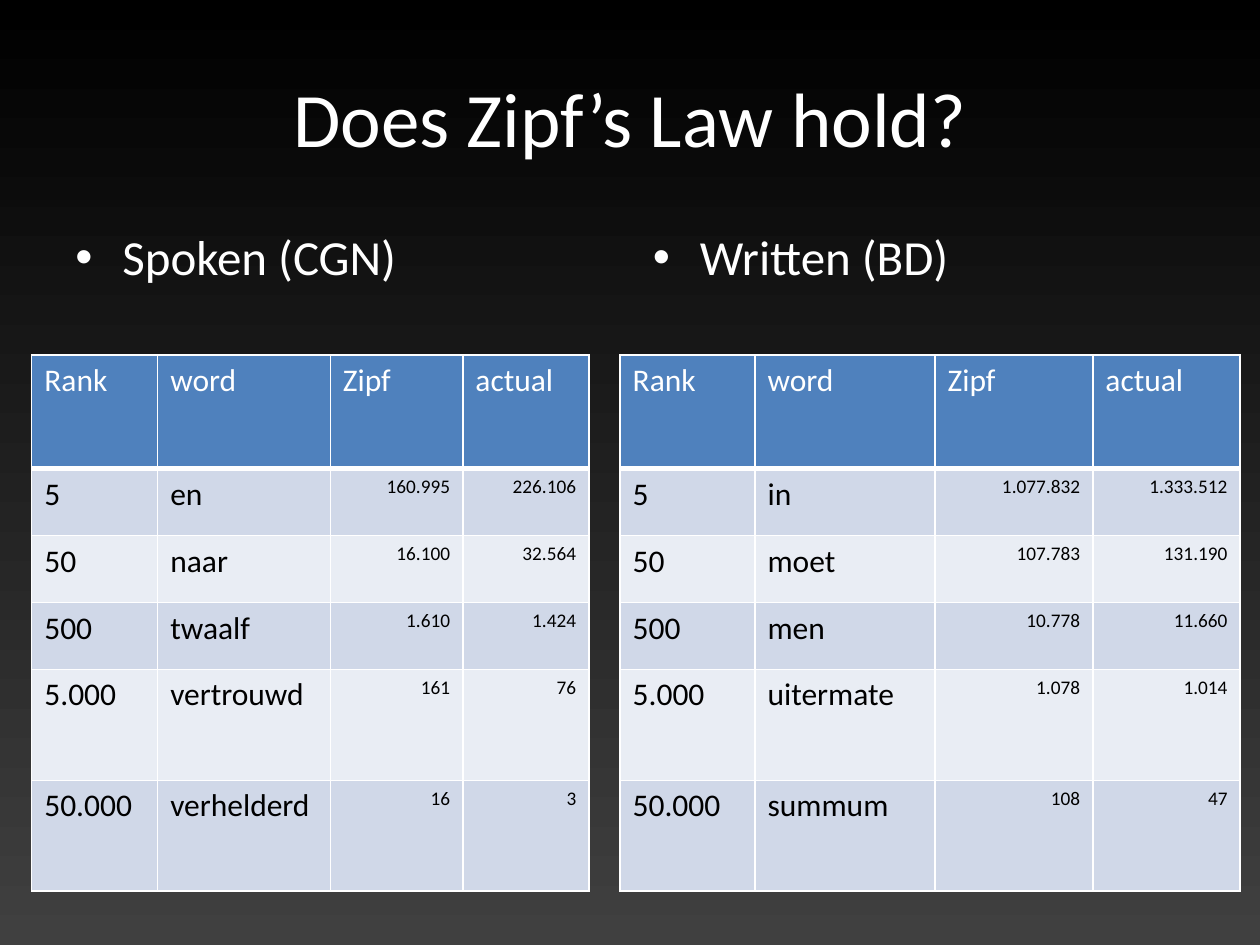
from lxml.etree import SubElement
from pptx import Presentation
from pptx.dml.color import RGBColor
from pptx.enum.text import MSO_ANCHOR, PP_ALIGN
from pptx.oxml.ns import qn
from pptx.util import Cm, Pt

# Content
TITLE = "Does Zipf’s Law hold?"
HEADER = ("Rank", "word", "Zipf", "actual")
CORPORA = [
    {
        "heading": "Spoken (CGN)", "heading_left": 1.27, "left": 0.64,
        "widths": (2.54, 3.48, 2.67, 2.54),
        "words": [
            ("5", "en", "160.995", "226.106"),
            ("50", "naar", "16.100", "32.564"),
            ("500", "twaalf", "1.610", "1.424"),
            ("5.000", "vertrouwd", "161", "76"),
            ("50.000", "verhelderd", "16", "3"),
        ],
    },
    {
        "heading": "Written (BD)", "heading_left": 12.91, "left": 12.5,
        "widths": (2.72, 3.63, 3.18, 2.97),
        "words": [
            ("5", "in", "1.077.832", "1.333.512"),
            ("50", "moet", "107.783", "131.190"),
            ("500", "men", "10.778", "11.660"),
            ("5.000", "uitermate", "1.078", "1.014"),
            ("50.000", "summum", "108", "47"),
        ],
    },
]
TABLE_TOP = 7.16
ROW_HEIGHTS = (2.29, 1.35, 1.35, 1.35, 2.23, 2.23)

# Formats
WHITE, BLACK, DARK_GREY = "FFFFFF", "000000", "404040"
HEADER_FILL, BAND_FILLS = "4F81BD", ("D0D8E8", "E9EDF4")
TITLE_FORMAT = {"alignment": PP_ALIGN.CENTER}
HEADING_FORMAT = {"alignment": PP_ALIGN.LEFT, "space_before": Pt(5.6)}
LABEL_FORMAT = {"alignment": PP_ALIGN.LEFT}
COUNT_FORMAT = {"alignment": PP_ALIGN.RIGHT}


def rgb(value):
    return RGBColor.from_string(value)


def write(frame, text, size, color, paragraph_format):
    paragraph = frame.paragraphs[0]
    for name, value in paragraph_format.items():
        setattr(paragraph, name, value)
    run = paragraph.add_run()
    run.text = text
    for name, value in {"name": "Calibri", "size": Pt(size)}.items():
        setattr(run.font, name, value)
    run.font.color.rgb = rgb(color)
    return paragraph


def add_text(slide, box, anchor, *text_and_format):
    frame = slide.shapes.add_textbox(*map(Cm, box)).text_frame
    for name, value in {"word_wrap": True, "vertical_anchor": anchor}.items():
        setattr(frame, name, value)
    return write(frame, *text_and_format)


def add_bullet(paragraph, indent):
    properties = paragraph._p.get_or_add_pPr()
    properties.set("marL", str(Cm(indent)))
    properties.set("indent", str(-Cm(indent)))
    SubElement(properties, qn("a:buFont"), typeface="Arial")
    SubElement(properties, qn("a:buChar"), char="•")


def add_borders(cell, bottom_width):
    properties = cell._tc.get_or_add_tcPr()
    for side, width in {"L": 1, "R": 1, "T": 1, "B": bottom_width}.items():
        line = SubElement(properties, qn(f"a:ln{side}"), w=str(Pt(width)))
        fill = SubElement(line, qn("a:solidFill"))
        SubElement(fill, qn("a:srgbClr"), val=WHITE)


def add_frequencies(slide, corpus):
    rows = [HEADER, *corpus["words"]]
    widths = corpus["widths"]
    box = (corpus["left"], TABLE_TOP, sum(widths), sum(ROW_HEIGHTS))
    table = slide.shapes.add_table(len(rows), len(HEADER), *map(Cm, box)).table
    for column, width in zip(table.columns, widths):
        column.width = Cm(width)
    for row, height in zip(table.rows, ROW_HEIGHTS):
        row.height = Cm(height)

    for r, row in enumerate(rows):
        is_header = r == 0
        for c, text in enumerate(row):
            cell = table.cell(r, c)
            add_borders(cell, 3 if is_header else 1)
            cell.fill.solid()
            cell.fill.fore_color.rgb = rgb(
                HEADER_FILL if is_header else BAND_FILLS[(r - 1) % 2])
            is_count = not is_header and c >= 2
            write(cell.text_frame, text, 11 if is_count else 18,
                  WHITE if is_header else BLACK,
                  COUNT_FORMAT if is_count else LABEL_FORMAT)


def main():
    deck = Presentation()
    deck.slide_width, deck.slide_height = Cm(25.4), Cm(19.05)
    slide = deck.slides.add_slide(deck.slide_layouts[6])

    # Background: grey at the bottom to black at the top
    backdrop = slide.background.fill
    backdrop.gradient()
    backdrop.gradient_angle = 90
    for stop, color in zip(backdrop.gradient_stops, (DARK_GREY, BLACK)):
        stop.color.rgb = rgb(color)

    # Title
    add_text(slide, (1.27, 0.76, 22.86, 3.18), MSO_ANCHOR.MIDDLE,
             TITLE, 44, WHITE, TITLE_FORMAT)

    # Headings, then the word tables in front
    for corpus in CORPORA:
        heading = add_text(slide, (corpus["heading_left"], 4.45, 11.22, 12.57),
                           MSO_ANCHOR.TOP, corpus["heading"], 28, WHITE,
                           HEADING_FORMAT)
        add_bullet(heading, 0.95)
    for corpus in CORPORA:
        add_frequencies(slide, corpus)

    deck.save("out.pptx")


if __name__ == "__main__":
    main()
